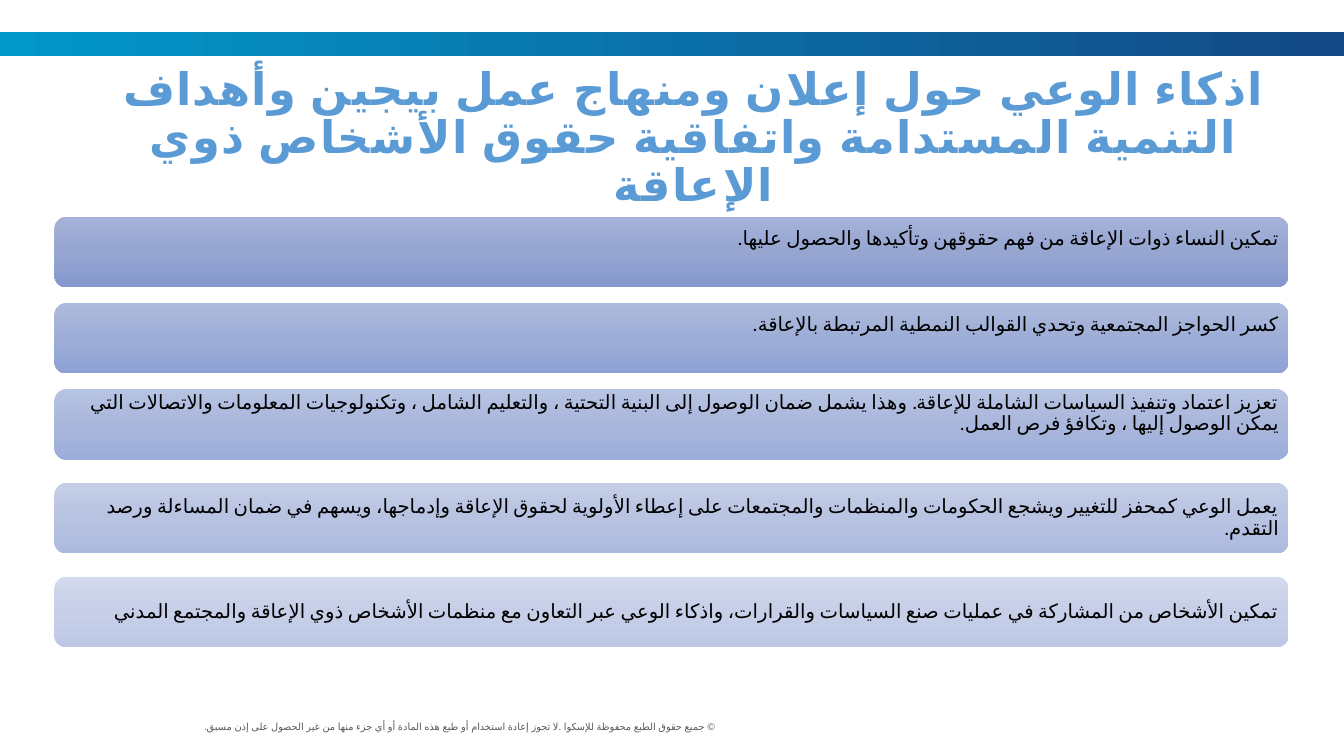
from lxml import etree
from pptx import Presentation
from pptx import util as u
from pptx.dml.color import RGBColor
from pptx.enum import shapes, text
from pptx.oxml.ns import qn

W, H = 13.33, 7.5
COLORS = {"title": "5B9BD5", "body": "000000", "footer": "595959",
          "band_left": "0298CA", "band_right": "134985"}
TITLE = ("اذكاء الوعي حول إعلان ومنهاج عمل بيجين وأهداف التنمية المستدامة "
         "واتفاقية حقوق الأشخاص ذوي الإعاقة")
FOOTER = ("© جميع حقوق الطبع محفوظة للإسكوا. لا تجوز إعادة استخدام أو طبع هذه "
          "المادة أو أي جزء منها من غير الحصول على إذن مسبق.")
TOP, MIDDLE = text.MSO_ANCHOR.TOP, text.MSO_ANCHOR.MIDDLE
RIGHT, CENTER = text.PP_ALIGN.RIGHT, text.PP_ALIGN.CENTER

CARD_LEFT, CARD_TOP, CARD_W, CARD_H = 0.54, 2.15, 12.24, 0.7
# text, gradient stops, anchor, top inset, gap below
CARDS = [
    ("تمكين النساء ذوات الإعاقة من فهم حقوقهن وتأكيدها والحصول عليها.",
     ("A4B2D9", "97A6D1", "8497CE"), TOP, 0.08, 0.155),
    ("كسر الحواجز المجتمعية وتحدي القوالب النمطية المرتبطة بالإعاقة.",
     ("ACBADD", "9FAED7", "8DA1D4"), TOP, 0.08, 0.155),
    ("تعزيز اعتماد وتنفيذ السياسات الشاملة للإعاقة. وهذا يشمل ضمان الوصول إلى "
     "البنية التحتية ، والتعليم الشامل ، وتكنولوجيات المعلومات والاتصالات التي "
     "يمكن الوصول إليها ، وتكافؤ فرص العمل.",
     ("B7C3E2", "AAB7DC", "9BADDA"), TOP, 0, 0.23),
    ("يعمل الوعي كمحفز للتغيير ويشجع الحكومات والمنظمات والمجتمعات على إعطاء "
     "الأولوية لحقوق الإعاقة وإدماجها، ويسهم في ضمان المساءلة ورصد التقدم.",
     ("C4CEE7", "B8C3E2", "ACBAE0"), MIDDLE, 0.06, 0.23),
    ("تمكين الأشخاص من المشاركة في عمليات صنع السياسات والقرارات، واذكاء الوعي "
     "عبر التعاون مع منظمات الأشخاص ذوي الإعاقة والمجتمع المدني",
     ("D3DAED", "C7CFE8", "BEC8E6"), MIDDLE, 0.06, 0),
]


def set_attrs(obj, values):
    for name, value in values.items():
        setattr(obj, name, value)


def inches(*lengths):
    return [u.Inches(n) for n in lengths]


def set_gradient(sp, stops, angle):
    """Spread the stop colours evenly along a clockwise angle in degrees."""
    sp.fill.gradient()
    grad = sp.fill._xPr.find(qn("a:gradFill"))
    stop_list = grad.find(qn("a:gsLst"))
    for stop in list(stop_list):
        stop_list.remove(stop)
    for i, color in enumerate(stops):
        pos = str(100000 * i // (len(stops) - 1))
        stop = etree.SubElement(stop_list, qn("a:gs"), pos=pos)
        etree.SubElement(stop, qn("a:srgbClr"), val=color)
    grad.find(qn("a:lin")).set("ang", str(angle * 60000))


def add_block(slide, kind, box, stops, angle):
    sp = slide.shapes.add_shape(kind, *inches(*box))
    sp.shadow.inherit = False
    sp.line.fill.background()
    set_gradient(sp, stops, angle)
    return sp


def write_rtl(sp, words, color, font, paragraph, frame, spacing=0):
    """Fill a shape with one right-to-left paragraph."""
    tf = sp.text_frame
    set_attrs(tf, {"word_wrap": True, **frame})
    p = tf.paragraphs[0]
    set_attrs(p, paragraph)
    p._p.get_or_add_pPr().set("rtl", "1")
    r = p.add_run()
    r.text = words
    set_attrs(r.font, font)
    r.font.color.rgb = RGBColor.from_string(COLORS[color])
    props = r._r.get_or_add_rPr()
    props.set("lang", "ar-SA")
    if spacing:
        props.set("spc", str(spacing))
    etree.SubElement(props, qn("a:cs"), typeface=font["name"])


def add_card(slide, top, words, stops, anchor, inset):
    sp = add_block(slide, shapes.MSO_SHAPE.ROUNDED_RECTANGLE,
                   (CARD_LEFT, top, CARD_W, CARD_H), stops, 90)
    sp.adjustments[0] = 0.17
    side = u.Inches(0.06)
    write_rtl(sp, words, "body", {"name": "Calibri", "size": u.Pt(14)},
              {"alignment": RIGHT, "line_spacing": 0.9},
              {"vertical_anchor": anchor, "margin_left": side,
               "margin_right": side, "margin_top": u.Inches(inset),
               "margin_bottom": u.Inches(inset)})


def main():
    prs = Presentation()
    prs.slide_width, prs.slide_height = inches(W, H)
    slide = prs.slides.add_slide(prs.slide_layouts[6])

    add_block(slide, shapes.MSO_SHAPE.RECTANGLE, (0, 0.32, W, 0.24),
              (COLORS["band_left"], COLORS["band_right"]), 0)
    footer = slide.shapes.add_textbox(*inches(0.62, 7.1, 6.57, 0.23))
    write_rtl(footer, FOOTER, "footer", {"name": "Arial", "size": u.Pt(7)},
              {"alignment": RIGHT}, {"vertical_anchor": TOP})
    title = slide.shapes.add_textbox(*inches(0.83, 0.61, 12.09, 0.5))
    write_rtl(title, TITLE, "title",
              {"name": "Arial", "size": u.Pt(32), "bold": True},
              {"alignment": CENTER, "line_spacing": 0.9},
              {"vertical_anchor": TOP}, spacing=80)

    top = CARD_TOP
    for words, stops, anchor, inset, gap in CARDS:
        add_card(slide, top, words, stops, anchor, inset)
        top += CARD_H + gap
    prs.save("out.pptx")


if __name__ == "__main__":
    main()
